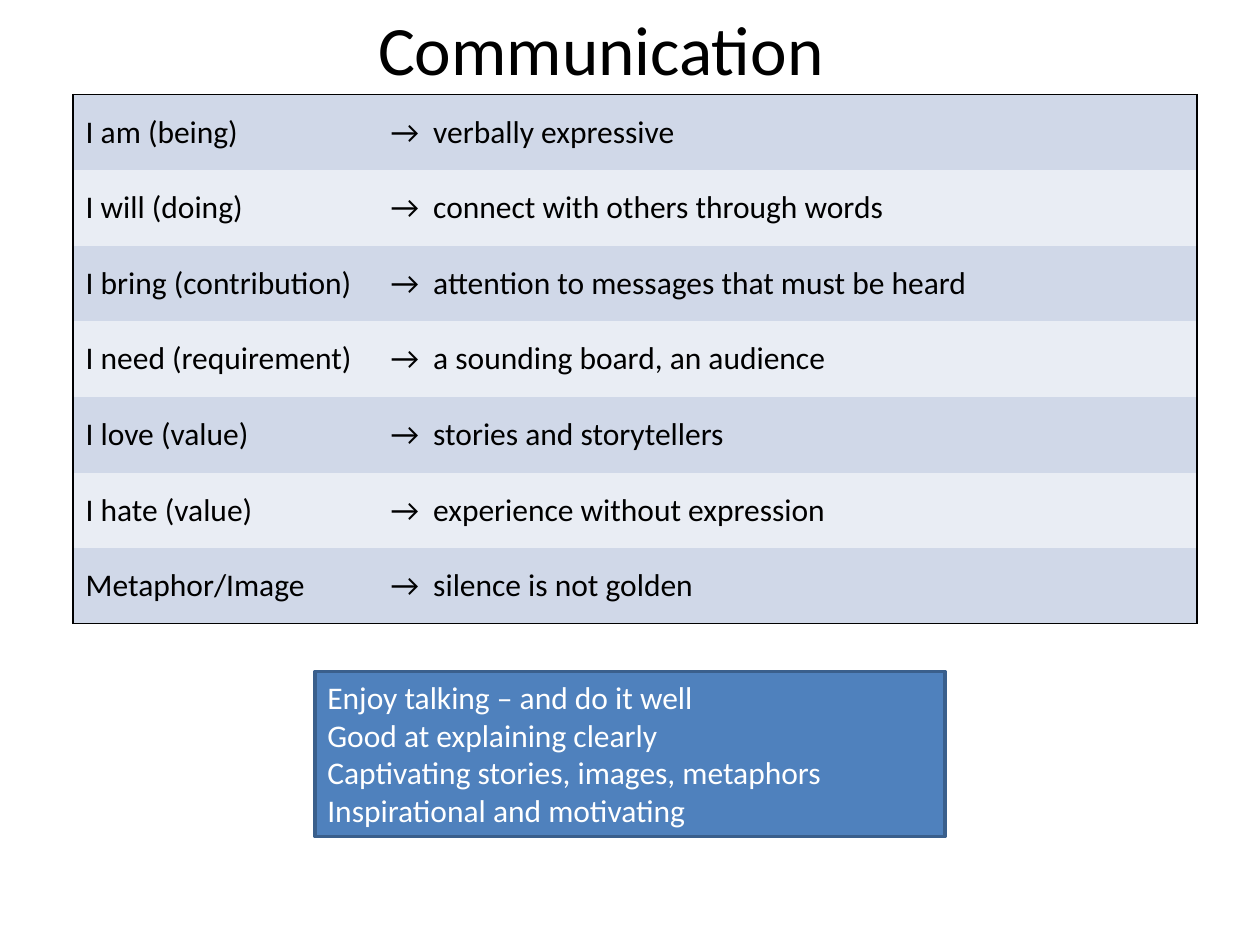
from lxml import etree
from pptx import Presentation
from pptx import util as u
from pptx.dml.color import RGBColor
from pptx.enum import shapes, text
from pptx.oxml import ns

# Content
TITLE = "Communication\t"
ROWS = [
    ("I am (being)", "verbally expressive"),
    ("I will (doing)", "connect with others through words"),
    ("I bring (contribution)", "attention to messages that must be heard"),
    ("I need (requirement)", "a sounding board, an audience"),
    ("I love (value)", "stories and storytellers"),
    ("I hate (value)", "experience without expression"),
    ("Metaphor/Image", "silence is not golden"),
]
STRENGTHS = [
    "Enjoy talking – and do it well",
    "Good at explaining clearly",
    "Captivating stories, images, metaphors",
    "Inspirational and motivating",
]

# Format
COLORS = {"ink": "000000", "paper": "FFFFFF", "odd": "D0D8E8",
          "even": "E9EDF4", "box": "4F81BD", "edge": "3A5F8C"}
FONT = "Calibri"
WIDTH, HEIGHT = 10, 7.5
COLUMNS, ROW_HEIGHT = (2.42, 6.5), 0.6
NO_STYLE = "{2D5ABB26-0587-4C30-8999-92F81FD0307C}"


def color(name):
    return RGBColor.from_string(COLORS[name])


def write(frame, lines, size=18, ink="ink", align=text.PP_ALIGN.LEFT,
          anchor=text.MSO_ANCHOR.MIDDLE):
    frame.word_wrap = True
    frame.vertical_anchor = anchor
    for index, line in enumerate(lines):
        para = frame.paragraphs[0] if index == 0 else frame.add_paragraph()
        para.alignment = align
        span = para.add_run()
        span.text = line
        span.font.name, span.font.size = FONT, u.Pt(size)
        span.font.color.rgb = color(ink)


def add_border(cell, side):
    props = cell._tc.get_or_add_tcPr()
    line = etree.SubElement(props, ns.qn(f"a:ln{side}"), w=str(u.Pt(1)))
    fill = etree.SubElement(line, ns.qn("a:solidFill"))
    etree.SubElement(fill, ns.qn("a:srgbClr"), val=COLORS["ink"])


deck = Presentation()
deck.slide_width, deck.slide_height = u.Inches(WIDTH), u.Inches(HEIGHT)
page = deck.slides.add_slide(deck.slide_layouts[5])

# Title
title = page.shapes.title
title.left, title.top = u.Inches(0.5), u.Inches(0.17)
title.width, title.height = u.Inches(WIDTH - 1), u.Inches(0.42)
write(title.text_frame, [TITLE], size=39.6, align=text.PP_ALIGN.CENTER)
title.text_frame.auto_size = text.MSO_AUTO_SIZE.NONE

# Table with an outer border only
holder = page.shapes.add_table(
    len(ROWS), len(COLUMNS), u.Inches(0.58), u.Inches(0.75),
    u.Inches(sum(COLUMNS)), u.Inches(ROW_HEIGHT * len(ROWS)))
table = holder.table
table.first_row = table.horz_banding = False
for style in holder._element.iter(ns.qn("a:tableStyleId")):
    style.text = NO_STYLE
for column, width in zip(table.columns, COLUMNS):
    column.width = u.Inches(width)
for r, (label, answer) in enumerate(ROWS):
    for c, words in enumerate((label, f"→  {answer}")):
        cell = table.cell(r, c)
        write(cell.text_frame, [words])
        cell.vertical_anchor = text.MSO_ANCHOR.MIDDLE
        edges = {"L": c == 0, "R": c == len(COLUMNS) - 1,
                 "T": r == 0, "B": r == len(ROWS) - 1}
        for side, outer in edges.items():
            if outer:
                add_border(cell, side)
        cell.fill.solid()
        cell.fill.fore_color.rgb = color("even" if r % 2 else "odd")

# Strengths box, half the slide wide and centred
box = page.shapes.add_shape(
    shapes.MSO_SHAPE.RECTANGLE, u.Inches(WIDTH / 4), u.Inches(5.33),
    u.Inches(WIDTH / 2), u.Inches(1.31))
box.shadow.inherit = False
box.fill.solid()
box.fill.fore_color.rgb = color("box")
box.line.color.rgb = color("edge")
box.line.width = u.Pt(2)
write(box.text_frame, STRENGTHS, ink="paper", anchor=text.MSO_ANCHOR.TOP)
box.text_frame.auto_size = text.MSO_AUTO_SIZE.SHAPE_TO_FIT_TEXT

deck.save("out.pptx")
